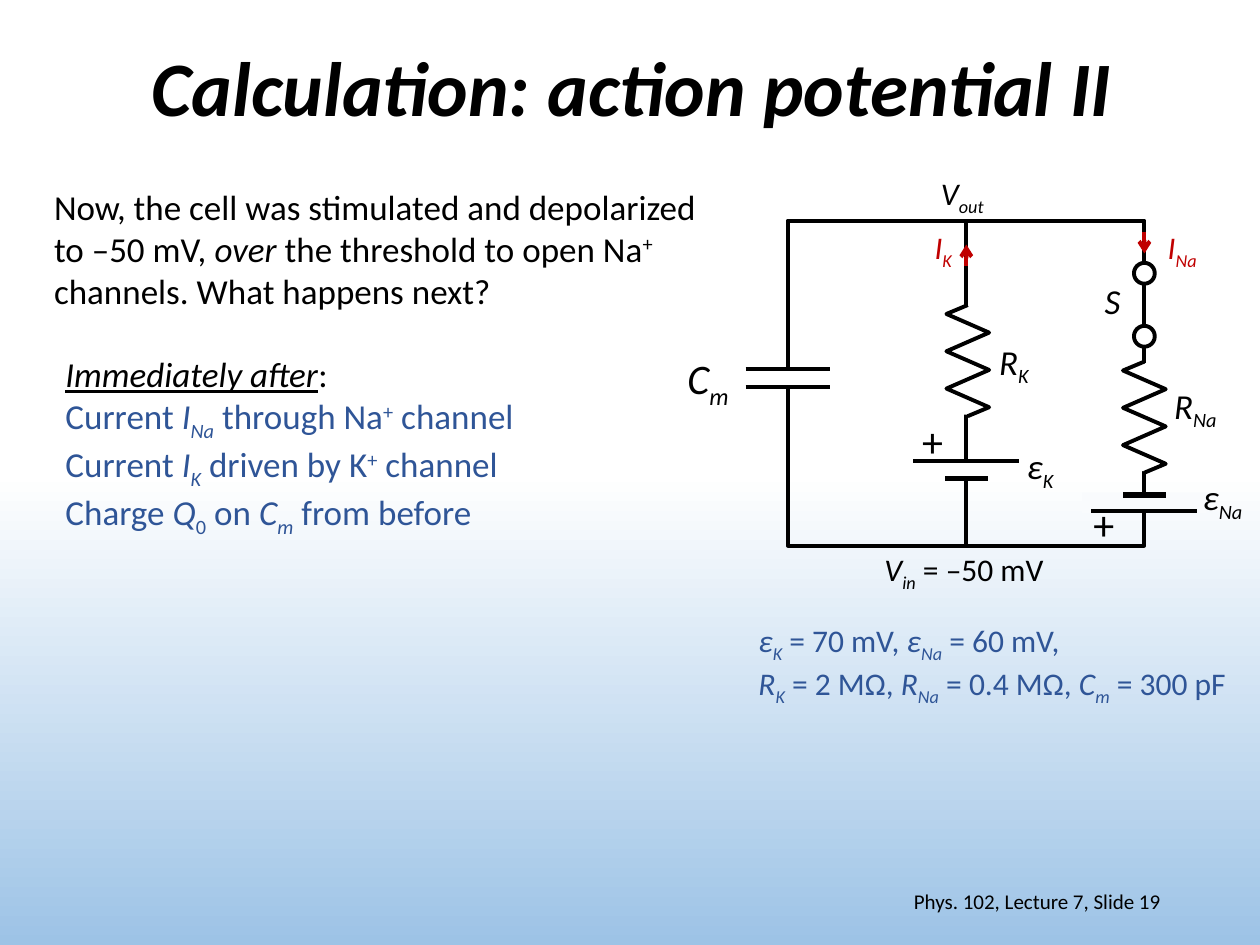
from dataclasses import dataclass

from lxml import etree
from pptx import Presentation
from pptx import util as u
from pptx.dml.color import RGBColor
from pptx.enum import shapes, text
from pptx.oxml import ns

BLACK = RGBColor(0, 0, 0)
WHITE = RGBColor(255, 255, 255)
SKY = RGBColor(0x9D, 0xC3, 0xE6)
BLUE = RGBColor(0x2F, 0x55, 0x97)
RED = RGBColor(0xC0, 0, 0)
FONT = "Calibri"
PAGE_WIDTH, PAGE_HEIGHT = 25.4, 19.05  # all plain lengths are centimetres

# Circuit grid
TOP, BOTTOM = 4.45, 11.0
X_CAP, X_K, X_NA = 15.88, 19.48, 23.07
SUB, SUPER = -25, 30
LABEL_HEIGHT = {18: 1.02, 20: 1.12, 24: 1.27}


@dataclass
class Span:
    text: str
    italic: bool = False
    shift: int = 0
    underline: bool = False


@dataclass
class Plate:
    y: float
    half: float
    weight: float = 2.25


@dataclass
class PlatePair:
    x: float
    top: float
    width: float
    plates: tuple[Plate, Plate]


@dataclass
class Label:
    left: float
    top: float
    width: float
    spans: list[Span]
    size: int = 20
    color: RGBColor = BLACK


def symbol(name: str, index: str) -> list[Span]:
    return [Span(name, True), Span(index, True, SUB)]


def write(page, left, top, width, height, paragraphs: list[list[Span]], *, size=20,
          color=BLACK, bold=False, align=None, anchor=text.MSO_ANCHOR.TOP,
          wrap=True, line_spacing=None, first_color=None):
    box = page.shapes.add_textbox(*map(u.Cm, (left, top, width, height)))
    frame = box.text_frame
    frame.word_wrap = wrap
    frame.vertical_anchor = anchor
    for i, spans in enumerate(paragraphs):
        para = frame.paragraphs[0] if i == 0 else frame.add_paragraph()
        para.alignment = align
        para.line_spacing = line_spacing
        for part in spans:
            span = para.add_run()
            span.text = part.text
            font = span.font
            font.name, font.size, font.bold = FONT, u.Pt(size), bold
            font.italic = part.italic
            font.underline = part.underline or None
            font.color.rgb = first_color if first_color and i == 0 else color
            if part.shift:
                span._r.get_or_add_rPr().set("baseline", str(part.shift * 1000))


def wire(page, x1, y1, x2, y2, color=BLACK, weight=2.25, arrow=False):
    line = page.shapes.add_connector(shapes.MSO_CONNECTOR.STRAIGHT,
                                     *map(u.Cm, (x1, y1, x2, y2)))
    line.line.color.rgb = color
    line.line.width = u.Pt(weight)
    if arrow:
        etree.SubElement(line.line._get_or_add_ln(), ns.qn("a:tailEnd"), type="arrow")
    etree.SubElement(line._element.spPr, ns.qn("a:effectLst"))


def outline(shape, fill=None, line=None):
    shape.shadow.inherit = False
    if fill is None:
        shape.fill.background()
    else:
        shape.fill.solid()
        shape.fill.fore_color.rgb = fill
    if line is None:
        shape.line.fill.background()
    else:
        shape.line.color.rgb = line
        shape.line.width = u.Pt(2.25)


def block(page, kind, left, top, width, height, fill=None, line=None):
    outline(page.shapes.add_shape(kind, *map(u.Cm, (left, top, width, height))), fill, line)


def page_color(y: float) -> RGBColor:
    """Colour of the page gradient at height y."""
    share = max(0, 2 * y / PAGE_HEIGHT - 1)
    return RGBColor(*(round(a + (b - a) * share) for a, b in zip(WHITE, SKY)))


def gap(page, x, top, width, height):
    """Break the wire behind a component."""
    block(page, shapes.MSO_SHAPE.RECTANGLE, x - width / 2, top, width, height,
          page_color(top + height / 2))


def resistor(page, x, top):
    height, swing, lead, teeth = 2.24, 0.43, 0.18, 6
    gap(page, x, top + 0.03, 0.88, height - 0.06)
    step = (height - 2 * lead) / (teeth - 1)
    points = [(x + (swing if i % 2 else -swing), top + lead + i * step) for i in range(teeth)]
    points.append((x, top + height))
    path = page.shapes.build_freeform(u.Cm(x), u.Cm(top))
    path.add_line_segments([(u.Cm(a), u.Cm(b)) for a, b in points], close=False)
    outline(path.convert_to_shape(), line=BLACK)


def plate_pair(page, pair: PlatePair):
    gap(page, pair.x, pair.top, pair.width, 0.41)
    for plate in pair.plates:
        wire(page, pair.x - plate.half, plate.y, pair.x + plate.half, plate.y,
             weight=plate.weight)


def closed_switch(page, x, upper, lower):
    gap(page, x, 5.27, 0.84, 1.7)
    wire(page, x, upper, x, lower)
    for y in (upper, lower):
        block(page, shapes.MSO_SHAPE.OVAL, x - 0.21, y - 0.21, 0.42, 0.42, WHITE, BLACK)


PAIRS = [
    PlatePair(X_CAP, 7.42, 1.7, (Plate(7.44, 0.85), Plate(7.8, 0.85))),
    PlatePair(X_K, 9.27, 2.51, (Plate(9.3, 1.07), Plate(9.65, 0.43, 3))),
    PlatePair(X_NA, 9.93, 2.51, (Plate(10.31, 1.07), Plate(9.98, 0.43, 3))),
]
LABELS = [
    Label(23.42, 7.62, 1.45, symbol("R", "Na")),
    Label(19.89, 6.73, 1.14, symbol("R", "K")),
    Label(20.45, 8.84, 1.09, symbol("ε", "K")),
    Label(24, 9.47, 1.4, symbol("ε", "Na")),
    Label(18.34, 8.26, 0.94, [Span("+")], 24),
    Label(21.79, 9.93, 0.94, [Span("+")], 24),
    Label(13.61, 6.99, 1.4, symbol("C", "m"), 24),
    Label(22.02, 5.51, 0.84, [Span("S", True)]),
    Label(18.72, 3.38, 1.6, symbol("V", "out"), 18),
    Label(17.58, 10.97, 3.81, [*symbol("V", "in"), Span(" = –50 mV")], 18),
    Label(18.59, 4.47, 0.89, symbol("I", "K"), 18, RED),
    Label(23.29, 4.47, 1.17, symbol("I", "Na"), 18, RED),
]
QUESTION = [[
    Span("Now, the cell was stimulated and depolarized to –50 mV, "), Span("over ", True),
    Span("the threshold to open Na"), Span("+", shift=SUPER),
    Span(" channels. What happens next?"),
]]
AFTERWARDS = [
    [Span("Immediately after", True, underline=True), Span(":")],
    [Span("Current "), *symbol("I", "Na"), Span(" through Na"), Span("+", shift=SUPER),
     Span(" channel")],
    [Span("Current "), *symbol("I", "K"), Span(" driven by K"), Span("+", shift=SUPER),
     Span(" channel")],
    [Span("Charge "), Span("Q", True), Span("0", shift=SUB), Span(" on "),
     *symbol("C", "m"), Span(" from before")],
]
VALUES = [
    [*symbol("ε", "K"), Span(" = 70 mV, "), *symbol("ε", "Na"), Span(" = 60 mV,")],
    [*symbol("R", "K"), Span(" = 2 MΩ, "), *symbol("R", "Na"), Span(" = 0.4 MΩ, "),
     *symbol("C", "m"), Span(" = 300 pF")],
]


def main():
    deck = Presentation()
    deck.slide_width, deck.slide_height = u.Cm(PAGE_WIDTH), u.Cm(PAGE_HEIGHT)
    page = deck.slides.add_slide(deck.slide_layouts[6])

    # Background
    fill = page.background.fill
    fill.gradient()
    fill.gradient_angle = 270
    for stop, position, color in zip(fill.gradient_stops, (0.5, 1), (WHITE, SKY)):
        stop.position, stop.color.rgb = position, color

    # Title and footer
    write(page, 1.8, 0, 21.9, 3.68, [[Span("Calculation: action potential II", True)]],
          size=44, bold=True, align=text.PP_ALIGN.CENTER, anchor=text.MSO_ANCHOR.MIDDLE,
          line_spacing=0.9)
    write(page, 17.93, 17.65, 5.72, 1.02, [[Span("Phys. 102, Lecture 7, Slide 19")]],
          size=12, align=text.PP_ALIGN.RIGHT, anchor=text.MSO_ANCHOR.MIDDLE)

    # Circuit
    block(page, shapes.MSO_SHAPE.RECTANGLE, X_CAP, TOP, X_NA - X_CAP, BOTTOM - TOP, line=BLACK)
    wire(page, X_K, TOP, X_K, BOTTOM)
    resistor(page, X_K + 0.03, 6.15)
    resistor(page, X_NA, 7.29)
    for pair in PAIRS:
        plate_pair(page, pair)
    closed_switch(page, X_NA, 5.51, 6.78)

    # Currents
    wire(page, X_K, 5.36, X_K, 4.93, RED, arrow=True)
    wire(page, X_NA, 4.67, X_NA, 5.11, RED, arrow=True)

    # Labels and text
    for label in LABELS:
        write(page, label.left, label.top, label.width, LABEL_HEIGHT[label.size],
              [label.spans], size=label.size, color=label.color, wrap=False)
    write(page, 0.84, 3.61, 13.97, 2.82, QUESTION)
    write(page, 1.07, 6.99, 12.07, 3.68, AFTERWARDS, color=BLUE, first_color=BLACK)
    write(page, 15.04, 12.4, 10.16, 1.8, VALUES, size=18, color=BLUE)

    deck.save("out.pptx")


if __name__ == "__main__":
    main()
